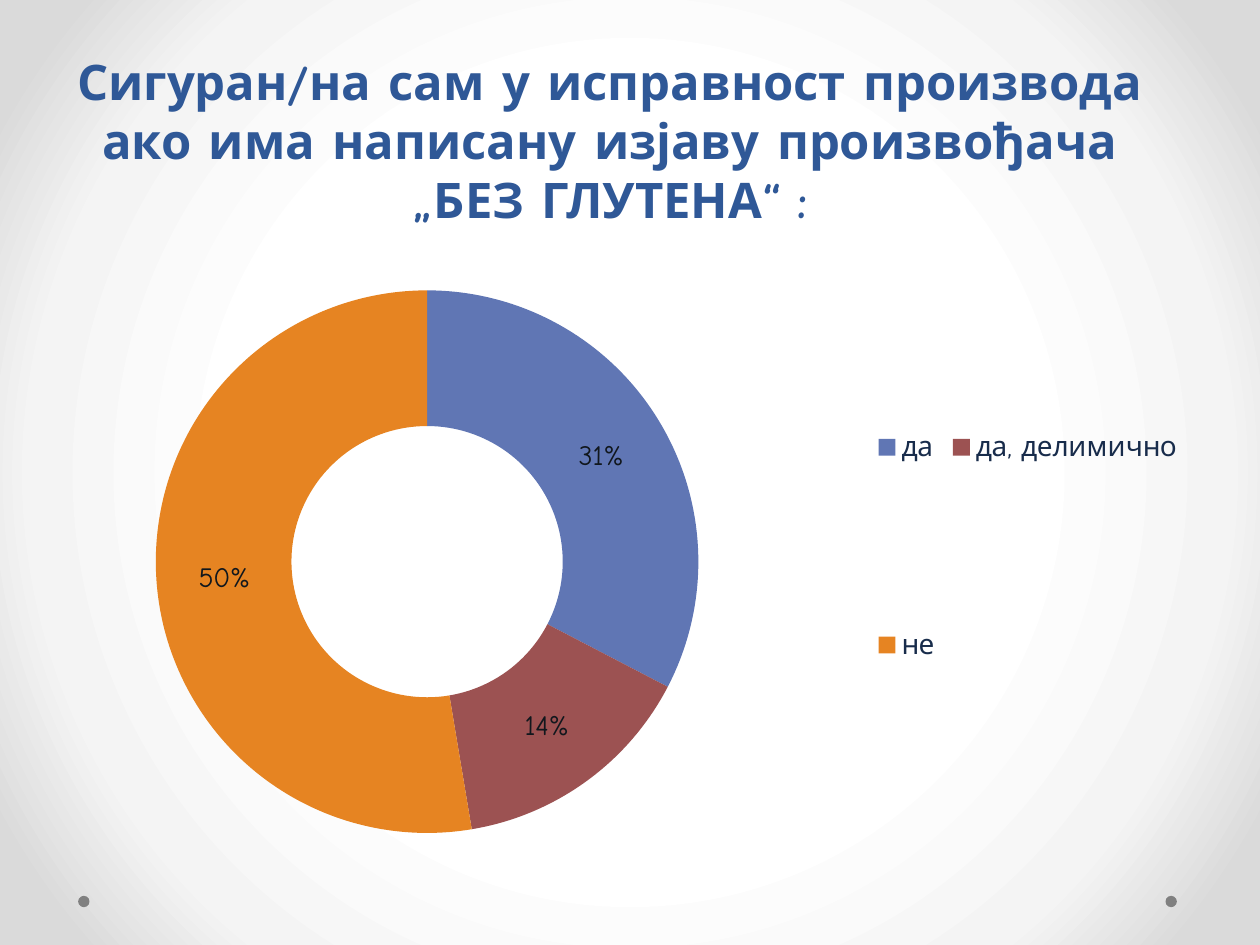
import pptx
import pptx.chart.data
import pptx.dml.color
import pptx.enum.chart
import pptx.enum.shapes
import pptx.enum.text
import pptx.oxml
import pptx.util
from pptx.util import Inches

FONT = "Comic Neue"
ANSWERS = {
    "да": (0.31, "6076B4"),
    "да, делимично": (0.14, "9C5252"),
    "не": (0.5, "E68422"),
}
BACKDROP_STOPS = [(50, "FFFFFF"), (76, "F4F4F4"), (92, "DADADA")]


def rgb(color):
    return pptx.dml.color.RGBColor.from_string(color)


def style_font(font, size, color, name=FONT, bold=False):
    font.size = pptx.util.Pt(size)
    font.color.rgb = rgb(color)
    font.name = name
    font.bold = bold


def set_backdrop(slide):
    fill = slide.background.fill
    fill.gradient()
    gradient = slide.background._cSld.bg.bgPr.find(pptx.oxml.ns.qn("a:gradFill"))
    stops = "".join(
        f'<a:gs pos="{position * 1000}"><a:srgbClr val="{color}"/></a:gs>'
        for position, color in BACKDROP_STOPS
    )
    radial = pptx.oxml.parse_xml(
        f'<a:gradFill {pptx.oxml.ns.nsdecls("a")} rotWithShape="1"><a:gsLst>{stops}</a:gsLst>'
        '<a:path path="circle"><a:fillToRect l="50000" t="50000" r="50000" b="50000"/>'
        "</a:path></a:gradFill>"
    )
    gradient.getparent().replace(gradient, radial)


def add_dot(slide, left):
    dot = slide.shapes.add_shape(
        pptx.enum.shapes.MSO_SHAPE.OVAL,
        Inches(left), Inches(7.11), Inches(0.09), Inches(0.09),
    )
    dot.shadow.inherit = False
    dot.fill.solid()
    dot.fill.fore_color.rgb = rgb("808080")
    dot.line.fill.background()


def set_title(slide, text):
    title = slide.shapes.title
    title.left, title.top = Inches(0.51), Inches(0.29)
    title.width, title.height = Inches(8.66), Inches(1.57)
    frame = title.text_frame
    frame.text = text
    frame.word_wrap = True
    frame.auto_size = pptx.enum.text.MSO_AUTO_SIZE.NONE
    frame.vertical_anchor = pptx.enum.text.MSO_ANCHOR.BOTTOM
    paragraph = frame.paragraphs[0]
    paragraph.alignment = pptx.enum.text.PP_ALIGN.CENTER
    style_font(paragraph.runs[0].font, 28, "2F5897", bold=True)


def place(part, x, y, w, h, target=""):
    for old in part.findall(pptx.oxml.ns.qn("c:layout")):
        part.remove(old)
    layout = pptx.oxml.parse_xml(
        f'<c:layout {pptx.oxml.ns.nsdecls("c")}><c:manualLayout>{target}'
        '<c:xMode val="edge"/><c:yMode val="edge"/>'
        f'<c:x val="{x}"/><c:y val="{y}"/><c:w val="{w}"/><c:h val="{h}"/>'
        "</c:manualLayout></c:layout>"
    )
    position = part.find(pptx.oxml.ns.qn("c:legendPos"))
    part.insert(0 if position is None else part.index(position) + 1, layout)


def add_answer_chart(slide):
    data = pptx.chart.data.CategoryChartData(number_format="0%")
    data.categories = list(ANSWERS)
    data.add_series("Series 1", [share for share, color in ANSWERS.values()])
    chart = slide.shapes.add_chart(
        pptx.enum.chart.XL_CHART_TYPE.DOUGHNUT,
        Inches(0.51), Inches(1.86), Inches(9), Inches(4.95), data,
    ).chart
    chart.has_title = False
    style_font(chart.font, 18, "000000", "Vollkorn")

    plot = chart.plots[0]
    plot.vary_by_categories = True
    series = plot.series[0]
    for index, (share, color) in enumerate(ANSWERS.values()):
        point_format = series.points[index].format
        point_format.fill.solid()
        point_format.fill.fore_color.rgb = rgb(color)
        point_format.line.fill.background()

    labels = series.data_labels
    labels.show_value = True
    labels.show_percentage = False
    labels.number_format = "0%"
    labels.number_format_is_linked = False
    style_font(labels.font, 16, "11171D")

    chart.has_legend = True
    legend = chart.legend
    legend.position = pptx.enum.chart.XL_LEGEND_POSITION.RIGHT
    legend.include_in_layout = False
    style_font(legend.font, 16, "182C4B")

    plot_area = chart.element.find(".//" + pptx.oxml.ns.qn("c:plotArea"))
    place(plot_area, 0.08, 0.09, 0.48, 0.87, '<c:layoutTarget val="inner"/>')
    place(chart.element.find(".//" + pptx.oxml.ns.qn("c:legend")), 0.71, 0.05, 0.28, 0.9)


def main():
    deck = pptx.Presentation()
    deck.slide_width, deck.slide_height = Inches(10), Inches(7.5)
    slide = deck.slides.add_slide(deck.slide_layouts[5])
    set_backdrop(slide)
    for left in (9.25, 0.62):
        add_dot(slide, left)
    set_title(
        slide,
        "Сигуран/на сам у исправност производа ако има написану изјаву "
        "произвођача „БЕЗ ГЛУТЕНА“ :",
    )
    add_answer_chart(slide)
    deck.save("out.pptx")


if __name__ == "__main__":
    main()
